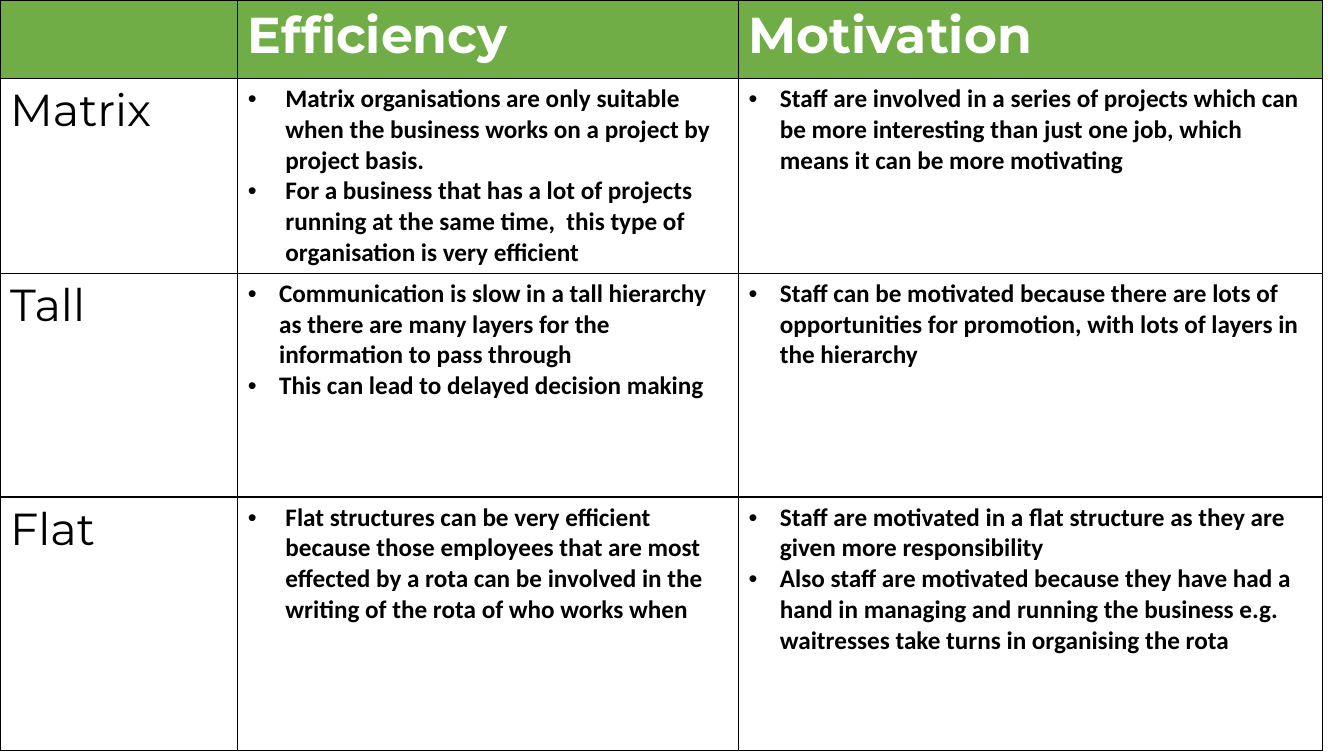
from lxml import etree
from pptx import Presentation
from pptx.dml.color import RGBColor
from pptx.oxml.ns import qn
from pptx.util import Cm, Pt

GREEN = RGBColor(0x70, 0xAD, 0x47)
WHITE = RGBColor(0xFF, 0xFF, 0xFF)
BLACK = RGBColor(0x00, 0x00, 0x00)

COLUMN_WIDTHS = [5.99, 12.62, 14.71]
ROW_HEIGHTS = [1.98, 4.7, 5.64, 6.38]
WIDE_INDENT = 0.95
NARROW_INDENT = 0.79

HEADINGS = ["", "Efficiency", "Motivation"]
STRUCTURES = [
    ("Matrix", WIDE_INDENT, [
        "Matrix organisations are only suitable when the business works on a project by project basis.",
        "For a business that has a lot of projects running at the same time,  this type of organisation is very efficient",
    ], [
        "Staff are involved in a series of projects which can be more interesting than just one job, which means it can be more motivating",
    ]),
    ("Tall", NARROW_INDENT, [
        "Communication is slow in a tall hierarchy as there are many layers for the information to pass through",
        "This can lead to delayed decision making",
    ], [
        "Staff can be motivated because there are lots of opportunities for promotion, with lots of layers in the hierarchy",
    ]),
    ("Flat", WIDE_INDENT, [
        "Flat structures can be very efficient because those employees that are most effected by a rota can be involved in the writing of the rota of who works when",
    ], [
        "Staff are motivated in a flat structure as they are given more responsibility",
        "Also staff are motivated because they have had a hand in managing and running the business e.g. waitresses take turns in organising the rota",
    ]),
]


def write_text(para, text, *, font="Montserrat", size=32, color=BLACK, bold=False, indent=None):
    span = para.add_run()
    span.text = text
    span.font.name = font
    span.font.size = Pt(size)
    span.font.bold = bold
    span.font.color.rgb = color
    if indent:
        properties = para._p.get_or_add_pPr()
        properties.set("marL", str(Cm(indent)))
        properties.set("indent", str(-Cm(indent)))
        etree.SubElement(properties, qn("a:buFont"), typeface="Arial")
        etree.SubElement(properties, qn("a:buChar"), char="•")


class ComparisonPage:
    def __init__(self, page, border_color=BLACK, border_width=1):
        self.page = page
        self.border_color = border_color
        self.border_width = border_width

    def add_grid(self, widths, heights):
        frame = self.page.shapes.add_table(
            len(heights), len(widths), Cm(0), Cm(0), Cm(sum(widths)), Cm(sum(heights)))
        table = frame.table
        for column, width in zip(table.columns, widths):
            column.width = Cm(width)
        for row, height in zip(table.rows, heights):
            row.height = Cm(height)
        return table

    def fill_cell(self, cell, texts, fill=WHITE, **text_format):
        cell.fill.solid()
        cell.fill.fore_color.rgb = fill
        self.add_borders(cell)
        frame = cell.text_frame
        for index, text in enumerate(texts):
            para = frame.add_paragraph() if index else frame.paragraphs[0]
            if text:
                write_text(para, text, **text_format)

    def add_borders(self, cell):
        properties = cell._tc.get_or_add_tcPr()
        for position, side in enumerate(("lnL", "lnR", "lnT", "lnB")):
            line = etree.Element(qn(f"a:{side}"), w=str(Pt(self.border_width)))
            solid = etree.SubElement(line, qn("a:solidFill"))
            etree.SubElement(solid, qn("a:srgbClr"), val=str(self.border_color))
            properties.insert(position, line)


def main():
    deck = Presentation()
    deck.slide_width = Cm(33.87)
    deck.slide_height = Cm(19.05)
    comparison = ComparisonPage(deck.slides.add_slide(deck.slide_layouts[6]))
    table = comparison.add_grid(COLUMN_WIDTHS, ROW_HEIGHTS)

    for column, heading in enumerate(HEADINGS):
        comparison.fill_cell(table.cell(0, column), [heading], fill=GREEN,
                             size=36, color=WHITE, bold=True)
    for row, (name, indent, efficiency, motivation) in enumerate(STRUCTURES, start=1):
        comparison.fill_cell(table.cell(row, 0), [name])
        points = [(efficiency, indent), (motivation, NARROW_INDENT)]
        for column, (texts, hanging) in enumerate(points, start=1):
            comparison.fill_cell(table.cell(row, column), texts, font="Calibri",
                                 size=18, bold=True, indent=hanging)
    deck.save("out.pptx")


if __name__ == "__main__":
    main()
